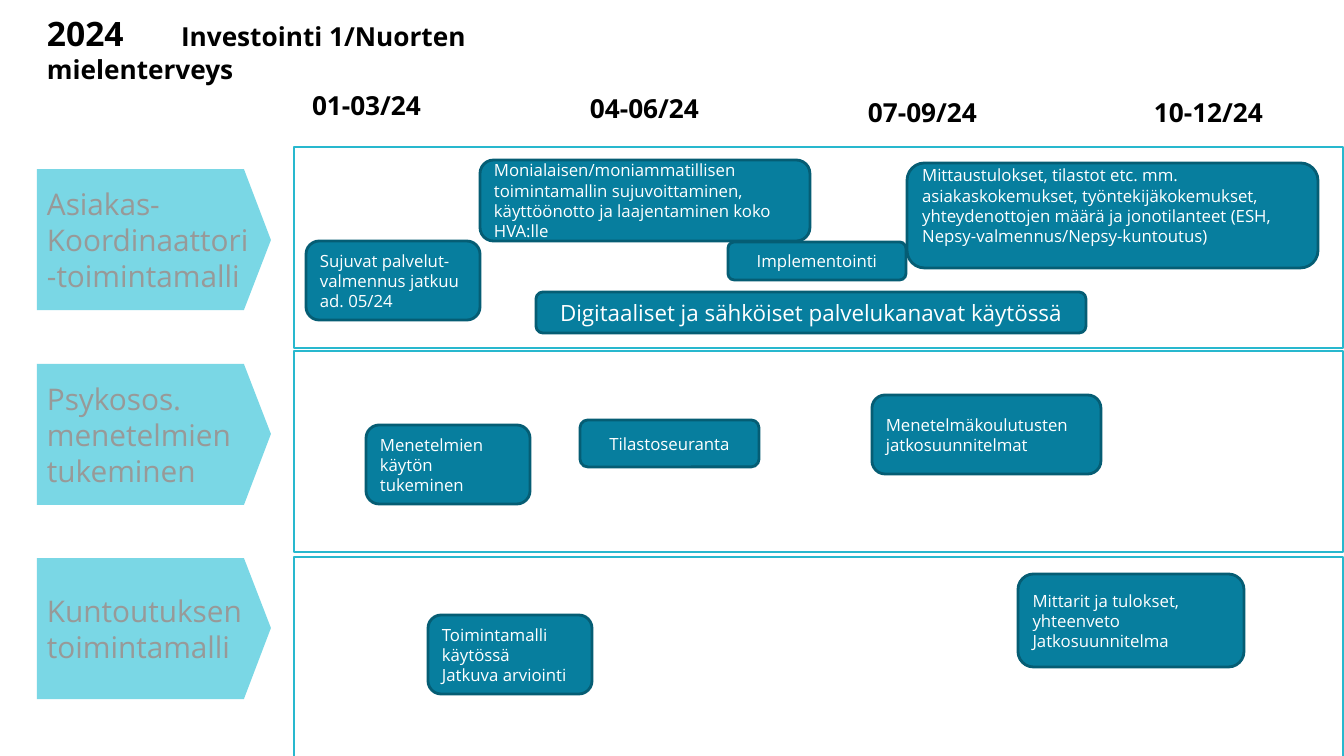
from pptx import Presentation
from pptx.dml.color import RGBColor
from pptx.enum.shapes import MSO_SHAPE
from pptx.enum.text import MSO_ANCHOR, MSO_AUTO_SIZE, PP_ALIGN
from pptx.oxml import parse_xml
from pptx.oxml.ns import nsdecls
from pptx.util import Pt

YEAR, TOPIC = "2024", "Investointi 1/Nuorten mielenterveys"
QUARTERS = [
    ("01-03/24", 302, 84, 144),
    ("04-06/24", 580, 87, 144),
    ("07-09/24", 858, 91, 144),
    ("10-12/24", 1144, 91, 149),
]
LANES = [
    (147, 169, ["Asiakas-", "Koordinaattori", "-toimintamalli"]),
    (351, 364, ["Psykosos.", "menetelmien", "tukeminen"]),
    (557, 558, ["Kuntoutuksen", "toimintamalli"]),
]
LEFT, CENTER = PP_ALIGN.LEFT, PP_ALIGN.CENTER
ACTIVITIES = [
    (["Sujuvat palvelut-valmennus jatkuu ad. 05/24"], (306, 241, 174, 79), 12, LEFT, 5),
    (["Monialaisen/moniammatillisen toimintamallin sujuvoittaminen, "
      "käyttöönotto ja laajentaminen koko HVA:lle"], (480, 160, 330, 81), 12, LEFT, 5),
    (["Digitaaliset ja sähköiset palvelukanavat käytössä"],
     (536, 292, 550, 41), 16, CENTER, 5),
    (["Mittaustulokset, tilastot etc. mm. asiakaskokemukset, "
      "työntekijäkokemukset, yhteydenottojen määrä ja jonotilanteet "
      "(ESH, Nepsy-valmennus/Nepsy-kuntoutus)"], (907, 163, 411, 105), 12, LEFT, 25),
    (["Menetelmien käytön tukeminen"], (366, 425, 164, 79), 12, LEFT, 5),
    (["Tilastoseuranta"], (580, 420, 179, 47), 12, CENTER, 5),
    (["Menetelmäkoulutusten jatkosuunnitelmat"], (872, 395, 229, 79), 12, LEFT, 5),
    (["Toimintamalli käytössä", "Jatkuva arviointi"], (428, 615, 164, 79), 12, LEFT, 5),
    (["Mittarit ja tulokset, yhteenveto", "Jatkosuunnitelma"],
     (1018, 574, 226, 93), 12, LEFT, 5),
    (["Implementointi"], (728, 242, 178, 38), 12, CENTER, 5),
]
COLORS = {
    "text": "000000", "lane": "FFFFFF", "lane_line": "28B8CE",
    "arrow": "7AD7E5", "arrow_text": "989998",
    "activity": "077E9E", "activity_line": "055D74", "activity_text": "FFFFFF",
}
FONT = "Open Sans"
LANE_LEFT, LANE_WIDTH, LANE_HEIGHT = 294, 1049, 201
ARROW_LEFT, ARROW_SHOULDER, ARROW_WIDTH, ARROW_HEIGHT = 37, 207, 234, 141
TOPIC_TAB = 134
EMU_PER_PX = 914400 / 100.8


def px(length):
    return round(length * EMU_PER_PX)


def color(key):
    return RGBColor.from_string(COLORS[key])


def paint(shape, fill, line=None):
    shape.shadow.inherit = False
    shape.fill.solid()
    shape.fill.fore_color.rgb = color(fill)
    if line:
        shape.line.color.rgb = color(line)
        shape.line.width = Pt(2)
    else:
        shape.line.fill.background()


def frame_text(shape, anchor, wrap=True, bottom=5):
    frame = shape.text_frame
    frame.word_wrap = wrap
    frame.auto_size = MSO_AUTO_SIZE.NONE
    frame.vertical_anchor = anchor
    frame.margin_left = frame.margin_right = px(10)
    frame.margin_top, frame.margin_bottom = px(5), px(bottom)
    return frame


def add_run(paragraph, text, size, ink, bold=False):
    run = paragraph.add_run()
    run.text = text
    run.font.name, run.font.size, run.font.bold = FONT, Pt(size), bold
    run.font.color.rgb = color(ink)


def write(frame, lines, size, ink, align=LEFT, bold=False):
    for index, line in enumerate(lines):
        paragraph = frame.add_paragraph() if index else frame.paragraphs[0]
        paragraph.alignment = align
        add_run(paragraph, line, size, ink, bold)


def add_title(slide):
    title = slide.shapes.title
    title.left, title.top, title.width, title.height = map(px, (37, 8, 632, 82))
    paragraph = frame_text(title, MSO_ANCHOR.TOP).paragraphs[0]
    paragraph.alignment = LEFT
    paragraph._p.get_or_add_pPr().append(parse_xml(
        f'<a:tabLst {nsdecls("a")}><a:tab pos="{px(TOPIC_TAB)}" algn="l"/></a:tabLst>'))
    add_run(paragraph, YEAR, 24, "text", True)
    add_run(paragraph, "\t" + TOPIC, 18.7, "text", True)


def add_arrow(slide, top, lines):
    shoulder, bottom = ARROW_LEFT + ARROW_SHOULDER, top + ARROW_HEIGHT
    outline = slide.shapes.build_freeform(shoulder, bottom, EMU_PER_PX)
    outline.add_line_segments([
        (ARROW_LEFT, bottom), (ARROW_LEFT, top), (shoulder, top),
        (ARROW_LEFT + ARROW_WIDTH, top + ARROW_HEIGHT / 2),
    ])
    arrow = outline.convert_to_shape()
    paint(arrow, "arrow")
    write(frame_text(arrow, MSO_ANCHOR.MIDDLE, wrap=False), lines, 21.3, "arrow_text")


def main():
    deck = Presentation()
    deck.slide_width, deck.slide_height = px(1344), px(756)
    slide = deck.slides.add_slide(deck.slide_layouts[5])
    add_title(slide)

    for lane_top, arrow_top, lines in LANES:
        lane = slide.shapes.add_shape(
            MSO_SHAPE.RECTANGLE, *map(px, (LANE_LEFT, lane_top, LANE_WIDTH, LANE_HEIGHT)))
        paint(lane, "lane", "lane_line")
        add_arrow(slide, arrow_top, lines)

    for quarter, left, top, width in QUARTERS:
        heading = slide.shapes.add_textbox(*map(px, (left, top, width, 41)))
        write(frame_text(heading, MSO_ANCHOR.TOP), [quarter], 18.7, "text", bold=True)

    for lines, box, size, align, bottom in ACTIVITIES:
        activity = slide.shapes.add_shape(MSO_SHAPE.ROUNDED_RECTANGLE, *map(px, box))
        paint(activity, "activity", "activity_line")
        frame = frame_text(activity, MSO_ANCHOR.MIDDLE, bottom=bottom)
        write(frame, lines, size, "activity_text", align)

    deck.save("out.pptx")


if __name__ == "__main__":
    main()
